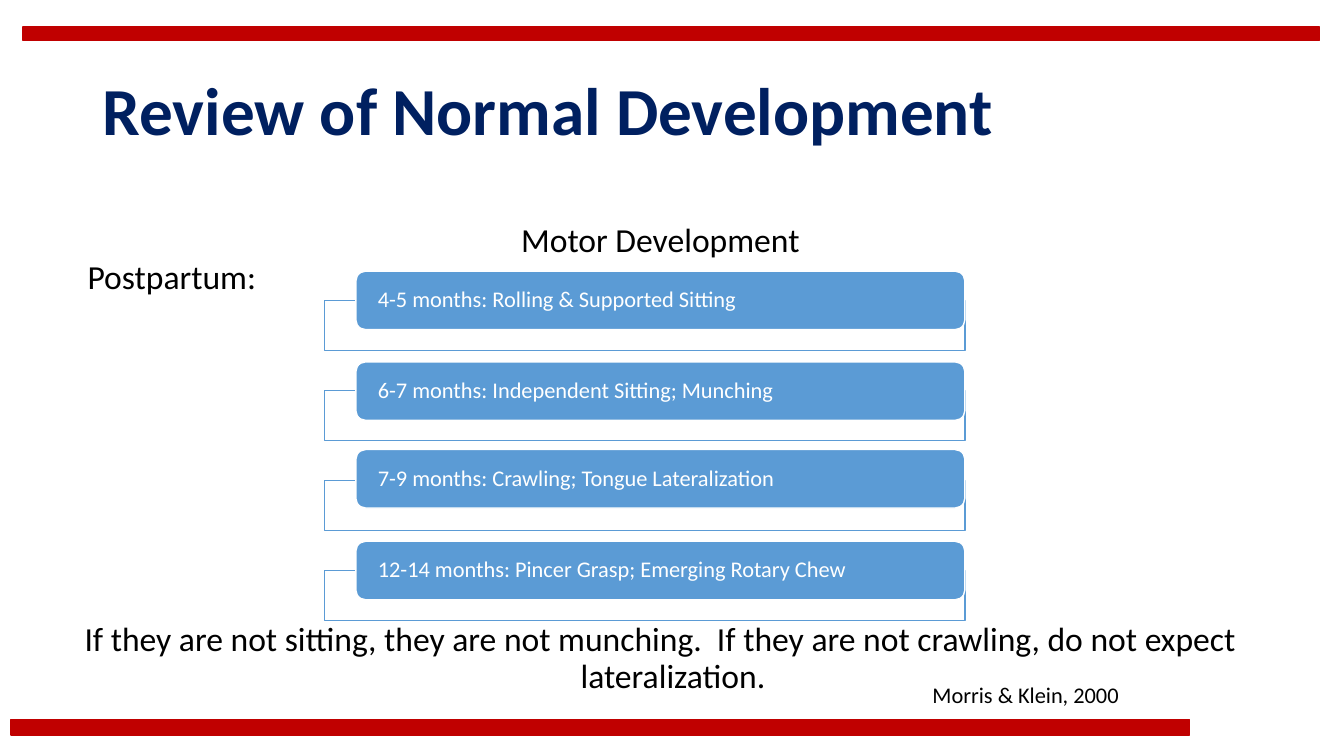
from dataclasses import dataclass, field

from lxml.etree import SubElement
from pptx import Presentation
from pptx.dml.color import RGBColor
from pptx.enum.shapes import MSO_SHAPE as Preset
from pptx.enum.text import MSO_ANCHOR as Anchor, PP_ALIGN as Align
from pptx.oxml.ns import qn
from pptx.shapes.autoshape import Shape
from pptx.slide import Slide
from pptx.text.text import TextFrame
from pptx.util import Inches, Pt

RED, NAVY, BLUE, WHITE, BLACK = "C00000", "002060", "5B9BD5", "FFFFFF", "000000"
FRAME_TOP, FRAME_STEP = 2.98, 0.893


@dataclass
class Area:
    left: float
    top: float
    width: float
    height: float

    def lengths(self) -> list[Inches]:
        return [Inches(n) for n in (self.left, self.top, self.width, self.height)]


@dataclass
class Style:
    size: int
    color: str = BLACK
    bold: bool = False
    spacing: float = 0.9
    align: Align = Align.LEFT
    anchor: Anchor = Anchor.TOP
    hanging: float = 0
    inset: tuple[float, float] = (0.1, 0.05)


@dataclass
class Label:
    text: str
    area: Area
    style: Style = field(default_factory=lambda: Style(24))


@dataclass
class Stage:
    text: str
    top: float


BODY = Style(24, align=Align.CENTER, hanging=0.25, inset=(0.1, 0.1))
CARD = Style(16, WHITE, anchor=Anchor.MIDDLE, inset=(0.19, 0))
BARS = [Area(0.11, 7.14, 11.69, 0.15), Area(0.23, 0.27, 12.86, 0.13)]
LABELS = [
    Label("Review of Normal Development", Area(0.92, 0.4, 11.5, 1.45),
          Style(48, NAVY, True, anchor=Anchor.MIDDLE)),
    Label("Motor Development", Area(0.55, 2.12, 12, 0.55), BODY),
    Label("Postpartum:", Area(0.77, 2.48, 2.3, 0.57), Style(24, inset=(0.1, 0.1))),
    Label("If they are not sitting, they are not munching.  If they are not crawling, "
          "do not expect lateralization.", Area(0.55, 6.08, 12, 0.93), BODY),
    Label("Morris & Klein, 2000", Area(9.15, 6.71, 2.62, 0.37), Style(16, spacing=1)),
]
STAGES = [
    Stage("4-5 months: Rolling & Supported Sitting", 2.69),
    Stage("6-7 months: Independent Sitting; Munching", 3.59),
    Stage("7-9 months: Crawling; Tongue Lateralization", 4.46),
    Stage("12-14 months: Pincer Grasp; Emerging Rotary Chew", 5.37),
]


def rgb(color: str) -> RGBColor:
    return RGBColor.from_string(color)


def write(frame: TextFrame, text: str, style: Style) -> None:
    across, down = (Inches(n) for n in style.inset)
    para = frame.paragraphs[0]
    if style.hanging:
        props = para._p.get_or_add_pPr()
        props.set("marL", str(Inches(style.hanging)))
        props.set("indent", str(-Inches(style.hanging)))
    span = para.add_run()
    span.text = text
    span.font.color.rgb = rgb(style.color)
    formats = {
        frame: {"word_wrap": True, "vertical_anchor": style.anchor,
                "margin_left": across, "margin_right": across,
                "margin_top": down, "margin_bottom": down},
        para: {"alignment": style.align, "line_spacing": style.spacing},
        span.font: {"name": "Calibri", "size": Pt(style.size), "bold": style.bold},
    }
    for target, values in formats.items():
        for name, value in values.items():
            setattr(target, name, value)


def add_block(page: Slide, preset: Preset, area: Area, fill: str, line: str) -> Shape:
    block = page.shapes.add_shape(preset, *area.lengths())
    block.shadow.inherit = False
    block.fill.solid()
    block.fill.fore_color.rgb = rgb(fill)
    block.line.color.rgb = rgb(line)
    block.line.width = Pt(1)
    return block


def add_label(page: Slide, label: Label) -> None:
    box = page.shapes.add_textbox(*label.area.lengths())
    write(box.text_frame, label.text, label.style)


def add_stage(page: Slide, index: int, stage: Stage) -> None:
    frame_area = Area(3.22, FRAME_TOP + index * FRAME_STEP, 6.35, 0.5)
    frame = add_block(page, Preset.RECTANGLE, frame_area, WHITE, BLUE)
    tint = frame._element.spPr.find(qn("a:solidFill"))[0]
    SubElement(tint, qn("a:alpha"), val="90000")
    card_area = Area(3.53, stage.top, 6.04, 0.58)
    card = add_block(page, Preset.ROUNDED_RECTANGLE, card_area, BLUE, WHITE)
    write(card.text_frame, stage.text, CARD)


def main() -> None:
    deck = Presentation()
    deck.slide_width, deck.slide_height = Inches(13.33), Inches(7.5)
    page = deck.slides.add_slide(deck.slide_layouts[6])
    for area in BARS:
        add_block(page, Preset.RECTANGLE, area, RED, RED)
    for label in LABELS:
        add_label(page, label)
    for index, stage in enumerate(STAGES):
        add_stage(page, index, stage)
    deck.save("out.pptx")


if __name__ == "__main__":
    main()
